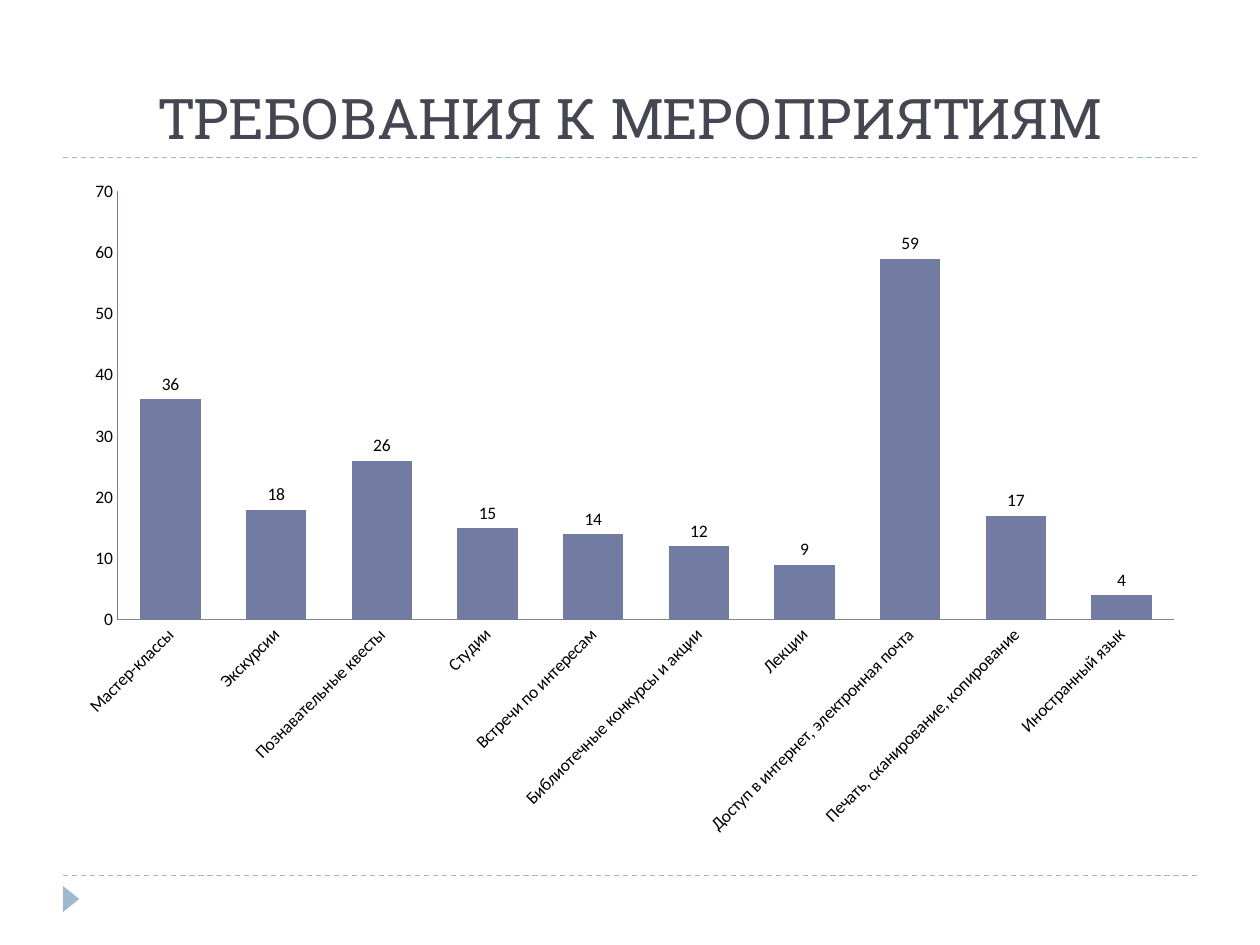
from lxml.etree import SubElement
from pptx import Presentation
from pptx.chart.data import CategoryChartData
from pptx.dml.color import RGBColor
from pptx.enum.chart import XL_CHART_TYPE, XL_LABEL_POSITION, XL_TICK_MARK
from pptx.enum.dml import MSO_LINE
from pptx.enum.shapes import MSO_CONNECTOR, MSO_SHAPE
from pptx.enum.text import MSO_ANCHOR, MSO_AUTO_SIZE, PP_ALIGN
from pptx.oxml.ns import qn
from pptx.util import Pt

TITLE = "ТРЕБОВАНИЯ К МЕРОПРИЯТИЯМ"
DEMAND = [
    ("Мастер-классы", 36),
    ("Экскурсии", 18),
    ("Познавательные квесты", 26),
    ("Студии", 15),
    ("Встречи по интересам", 14),
    ("Библиотечные конкурсы и акции", 12),
    ("Лекции", 9),
    ("Доступ в интернет, электронная почта", 59),
    ("Печать, сканирование, копирование", 17),
    ("Иностранный язык", 4),
]
COLORS = {"title": "464653", "accent": "9FB8CD", "bar": "727CA3",
          "axis": "878787", "text": "000000"}
LEFT, WIDTH = 36, 648
RULES_Y = (90, 500.4)


def color(name):
    return RGBColor.from_string(COLORS[name])


def add_rule(s, y):
    rule = s.shapes.add_connector(MSO_CONNECTOR.STRAIGHT, Pt(LEFT), Pt(y),
                                  Pt(LEFT + WIDTH), Pt(y))
    rule.line.color.rgb = color("accent")
    rule.line.width = Pt(0.75)
    rule.line.dash_style = MSO_LINE.DASH
    SubElement(rule._element.spPr, qn("a:effectLst"))


def add_marker(s):
    sp = s.shapes.add_shape(MSO_SHAPE.ISOSCELES_TRIANGLE,
                            Pt(33.1), Pt(509), Pt(15), Pt(9.4))
    sp.rotation = 90
    sp.shadow.inherit = False
    sp.fill.solid()
    sp.fill.fore_color.rgb = color("accent")
    sp.line.fill.background()


def fill_title(s):
    sp = s.shapes.title
    sp.left, sp.top, sp.width, sp.height = Pt(LEFT), Pt(12), Pt(WIDTH), Pt(78)
    tf = sp.text_frame
    tf.text = TITLE
    tf.word_wrap = True
    tf.auto_size = MSO_AUTO_SIZE.NONE
    tf.vertical_anchor = MSO_ANCHOR.BOTTOM
    p = tf.paragraphs[0]
    p.alignment = PP_ALIGN.CENTER
    font = p.runs[0].font
    font.name, font.size = "Roboto Slab", Pt(32)
    font.color.rgb = color("title")


def add_demand_chart(s):
    data = CategoryChartData(number_format="0")
    data.categories = [name for name, _ in DEMAND]
    data.add_series("Series 1", [value for _, value in DEMAND])
    chart = s.shapes.add_chart(XL_CHART_TYPE.COLUMN_CLUSTERED, Pt(LEFT), Pt(96),
                               Pt(WIDTH), Pt(388.8), data).chart
    chart.has_legend = chart.has_title = False
    chart.font.name, chart.font.size = "Calibri", Pt(10)
    chart.font.color.rgb = color("text")

    for axis, line in ((chart.category_axis, "axis"), (chart.value_axis, "bar")):
        axis.has_major_gridlines = False
        axis.major_tick_mark = axis.minor_tick_mark = XL_TICK_MARK.NONE
        axis.format.line.color.rgb = color(line)
        axis.format.line.width = Pt(0.75)
    chart.value_axis.minimum_scale = 0
    chart.value_axis.maximum_scale = 70
    chart.value_axis.major_unit = 10

    plot = chart.plots[0]
    plot.gap_width, plot.overlap = 75, -25
    plot.vary_by_categories = False
    plot.has_data_labels = True
    labels = plot.data_labels
    labels.show_value = True
    labels.number_format, labels.number_format_is_linked = "0", False
    labels.position = XL_LABEL_POSITION.OUTSIDE_END
    bars = plot.series[0].format
    bars.fill.solid()
    bars.fill.fore_color.rgb = color("bar")


def main():
    prs = Presentation()
    prs.slide_width, prs.slide_height = Pt(720), Pt(540)
    s = prs.slides.add_slide(prs.slide_layouts[5])
    for y in RULES_Y:
        add_rule(s, y)
    add_marker(s)
    fill_title(s)
    add_demand_chart(s)
    prs.save("out.pptx")


if __name__ == "__main__":
    main()
